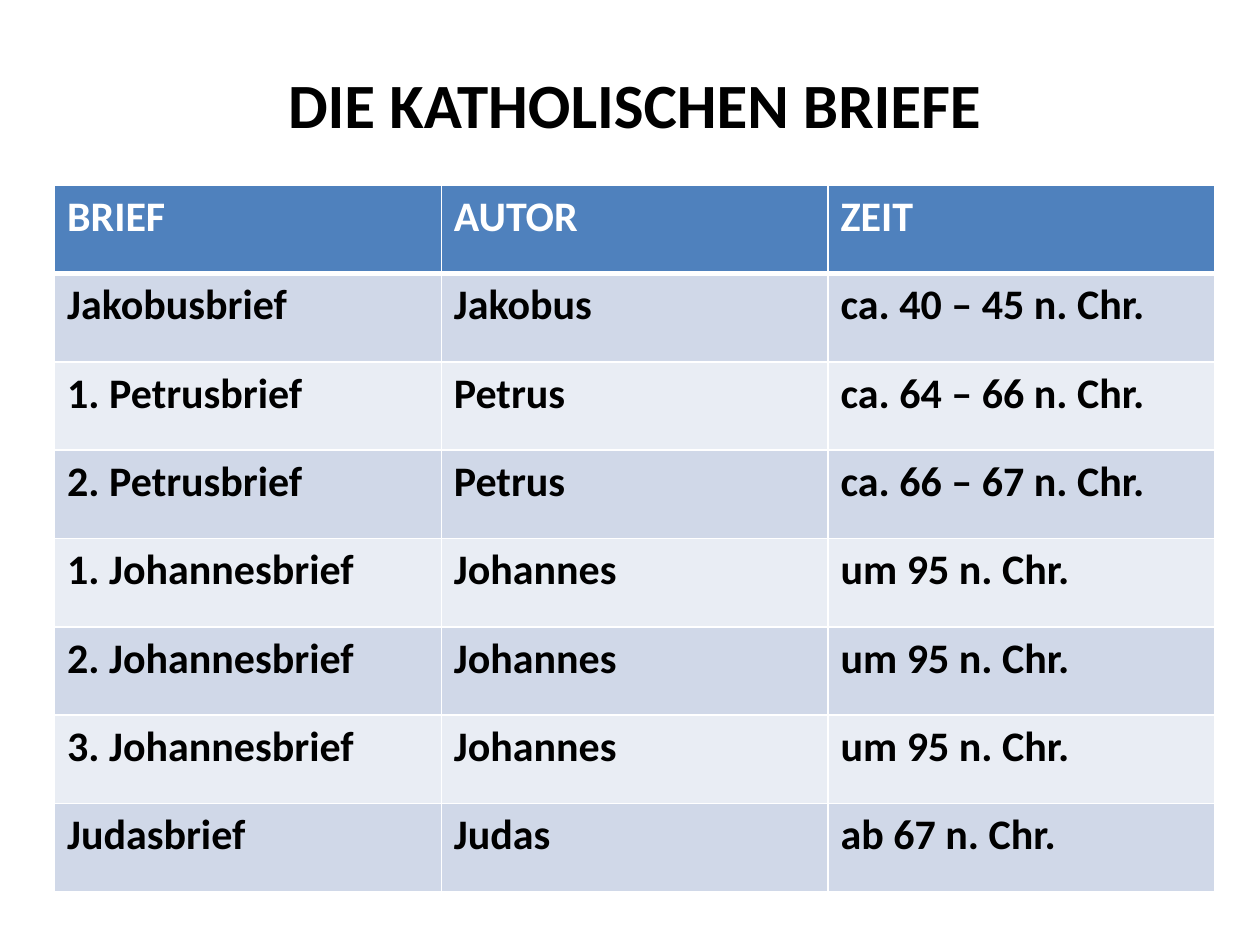
from pptx import Presentation
from pptx.dml.color import RGBColor
from pptx.enum.shapes import MSO_SHAPE
from pptx.enum.text import MSO_ANCHOR, PP_ALIGN
from pptx.oxml import parse_xml
from pptx.oxml.ns import nsdecls, qn
from pptx.util import Pt

WHITE = RGBColor(0xFF, 0xFF, 0xFF)
BLACK = RGBColor(0, 0, 0)
HEADER_BLUE = RGBColor(0x4F, 0x81, 0xBD)
BAND_DARK = RGBColor(0xD0, 0xD8, 0xE8)
BAND_LIGHT = RGBColor(0xE9, 0xED, 0xF4)
FONT = "Calibri"

LETTERS = [
    ("BRIEF", "AUTOR", "ZEIT"),
    ("Jakobusbrief", "Jakobus", "ca. 40 – 45 n. Chr."),
    ("1. Petrusbrief", "Petrus", "ca. 64 – 66 n. Chr."),
    ("2. Petrusbrief", "Petrus", "ca. 66 – 67 n. Chr."),
    ("1. Johannesbrief", "Johannes", "um 95 n. Chr."),
    ("2. Johannesbrief", "Johannes", "um 95 n. Chr."),
    ("3. Johannesbrief", "Johannes", "um 95 n. Chr."),
    ("Judasbrief", "Judas", "ab 67 n. Chr."),
]


def add_bold_run(paragraph, text, size, color):
    run = paragraph.add_run()
    run.text = text
    run.font.name = FONT
    run.font.size = Pt(size)
    run.font.bold = True
    run.font.color.rgb = color


def set_borders(cell, widths):
    """Draw white borders; widths are points for left, right, top, bottom."""
    properties = cell._tc.get_or_add_tcPr()
    for index, (side, width) in enumerate(zip("LRTB", widths)):
        properties.insert(index, parse_xml(
            f'<a:ln{side} {nsdecls("a")} w="{Pt(width)}"><a:solidFill>'
            f'<a:srgbClr val="{WHITE}"/></a:solidFill></a:ln{side}>'))


def add_title(slide, left, top, width, height):
    title = slide.shapes.add_shape(
        MSO_SHAPE.RECTANGLE, Pt(left), Pt(top), Pt(width), Pt(height))
    title.shadow.inherit = False
    title.line.fill.background()

    # Translucent white background
    title.fill.solid()
    title.fill.fore_color.rgb = WHITE
    color = title.fill._xPr.find(qn("a:solidFill"))[0]
    color.append(parse_xml(f'<a:alpha {nsdecls("a")} val="60000"/>'))

    frame = title.text_frame
    frame.word_wrap = True
    frame.vertical_anchor = MSO_ANCHOR.MIDDLE
    frame.margin_top, frame.margin_bottom = Pt(7), Pt(0)
    paragraph = frame.paragraphs[0]
    paragraph.alignment = PP_ALIGN.CENTER
    add_bold_run(paragraph, "DIE KATHOLISCHEN BRIEFE", 36, BLACK)


def add_letters_table(slide, left, top, width, height):
    table = slide.shapes.add_table(
        len(LETTERS), len(LETTERS[0]),
        Pt(left), Pt(top), Pt(width), Pt(height)).table
    for column in table.columns:
        column.width = Pt(width / len(LETTERS[0]))

    for row_index, letter in enumerate(LETTERS):
        table.rows[row_index].height = Pt(height / len(LETTERS))
        is_header = row_index == 0
        band = BAND_DARK if row_index % 2 else BAND_LIGHT
        for column_index, text in enumerate(letter):
            cell = table.cell(row_index, column_index)
            cell.fill.solid()
            cell.fill.fore_color.rgb = HEADER_BLUE if is_header else band
            # The line under the header is thicker
            set_borders(cell, (1, 1, 3 if row_index == 1 else 1,
                               3 if is_header else 1))
            add_bold_run(cell.text_frame.paragraphs[0], text, 24,
                         WHITE if is_header else BLACK)


def main():
    presentation = Presentation()
    presentation.slide_width, presentation.slide_height = Pt(720), Pt(540)
    slide = presentation.slides.add_slide(presentation.slide_layouts[6])
    add_title(slide, 31.2, 31.7, 663, 48.2)
    add_letters_table(slide, 31.2, 105.8, 663, 404)
    presentation.save("out.pptx")


if __name__ == "__main__":
    main()
